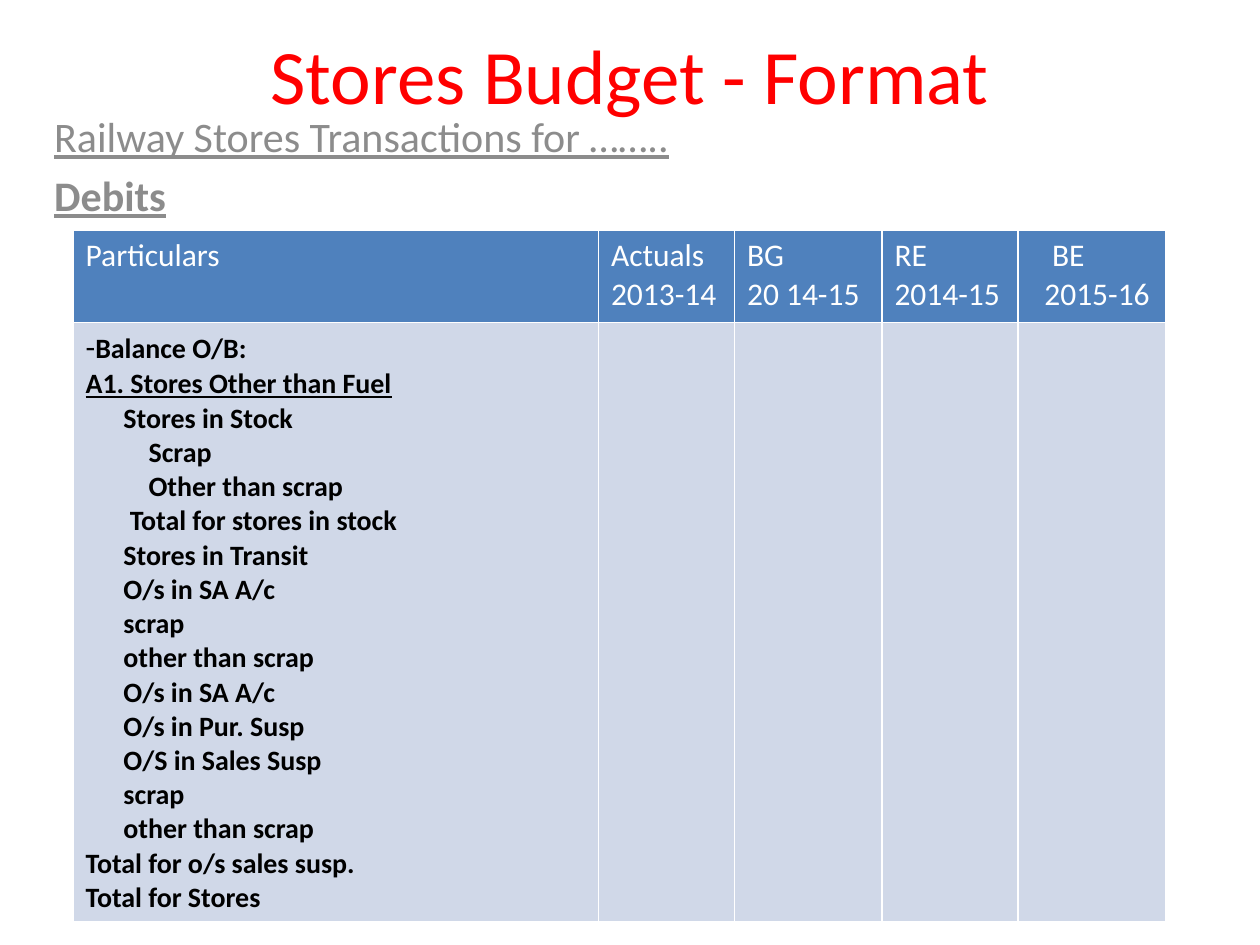
"""Build the Stores Budget format slide with its debits table."""
from pptx import Presentation
from pptx.dml.color import RGBColor
from pptx.enum.text import MSO_ANCHOR, PP_ALIGN
from pptx.util import Inches, Pt

RED = RGBColor(0xFF, 0x00, 0x00)
GRAY = RGBColor(0x8C, 0x8C, 0x8C)
WHITE = RGBColor(0xFF, 0xFF, 0xFF)
BLACK = RGBColor(0x00, 0x00, 0x00)
HEADER_BLUE = RGBColor(0x4F, 0x81, 0xBD)
BODY_BLUE = RGBColor(0xD0, 0xD8, 0xE8)


def next_paragraph(frame):
    first = frame.paragraphs[0]
    return frame.add_paragraph() if first.runs else first


def write(paragraph, text, size=16, color=BLACK, bold=False, underline=False,
          indent=0, align=None):
    run = paragraph.add_run()
    run.text = text
    run.font.name = "Calibri"
    run.font.size = Pt(size)
    run.font.color.rgb = color
    run.font.bold = bold
    run.font.underline = underline
    if indent:
        paragraph._p.get_or_add_pPr().set("marL", str(Inches(indent)))
    if align is not None:
        paragraph.alignment = align


presentation = Presentation()
presentation.slide_width = Inches(10)
presentation.slide_height = Inches(7.5)
slide = presentation.slides.add_slide(presentation.slide_layouts[0])

heading = slide.shapes.title
heading.left, heading.top = Inches(0.75), Inches(0.17)
heading.width, heading.height = Inches(8.5), Inches(0.83)
heading.text_frame.vertical_anchor = MSO_ANCHOR.MIDDLE
write(heading.text_frame.paragraphs[0], "Stores Budget - Format",
      size=44, color=RED, align=PP_ALIGN.CENTER)

transactions = slide.placeholders[1]
transactions.left, transactions.top = Inches(0.33), Inches(0.83)
transactions.width, transactions.height = Inches(9.33), Inches(5.83)
for text, bold in [("Railway Stores Transactions for ……..", False), ("Debits", True)]:
    write(next_paragraph(transactions.text_frame), text, size=24, color=GRAY,
          bold=bold, underline=True, align=PP_ALIGN.JUSTIFY)

budget = slide.shapes.add_table(2, 5, Inches(0.58), Inches(1.83),
                                Inches(8.67), Inches(5.24)).table
for column, width in zip(budget.columns, [4.17, 1.08, 1.17, 1.08, 1.17]):
    column.width = Inches(width)
for row, height, fill in zip(budget.rows, [0.73, 4.51], [HEADER_BLUE, BODY_BLUE]):
    row.height = Inches(height)
    for cell in row.cells:
        cell.fill.solid()
        cell.fill.fore_color.rgb = fill

headers = [
    [("Particulars", 0)],
    [("Actuals", 0), ("2013-14", 0)],
    [("BG", 0), ("20 14-15", 0)],
    [("RE", 0), ("2014-15", 0)],
    [("BE", 0.17), ("2015-16", 0.11)],
]
for cell, lines in zip(budget.rows[0].cells, headers):
    for text, indent in lines:
        write(next_paragraph(cell.text_frame), text, size=18, color=WHITE, indent=indent)

particulars = budget.cell(1, 0).text_frame
balance = particulars.paragraphs[0]
write(balance, "-", size=18)
write(balance, "Balance O/B:", bold=True)
write(next_paragraph(particulars), "A1. Stores Other than Fuel", bold=True, underline=True)
for text, indent in [
    ("Stores in Stock", 0.3),
    ("Scrap", 0.5),
    ("Other than scrap", 0.5),
    ("Total for stores in stock", 0.35),
    ("Stores in Transit", 0.3),
    ("O/s in SA A/c", 0.3),
    ("scrap", 0.3),
    ("other than scrap", 0.3),
    ("O/s in SA A/c", 0.3),
    ("O/s in Pur. Susp", 0.3),
    ("O/S in Sales Susp", 0.3),
    ("scrap", 0.3),
    ("other than scrap", 0.3),
    ("Total for o/s sales susp.", 0),
    ("Total for Stores", 0),
]:
    write(next_paragraph(particulars), text, bold=True, indent=indent)

presentation.save("out.pptx")
